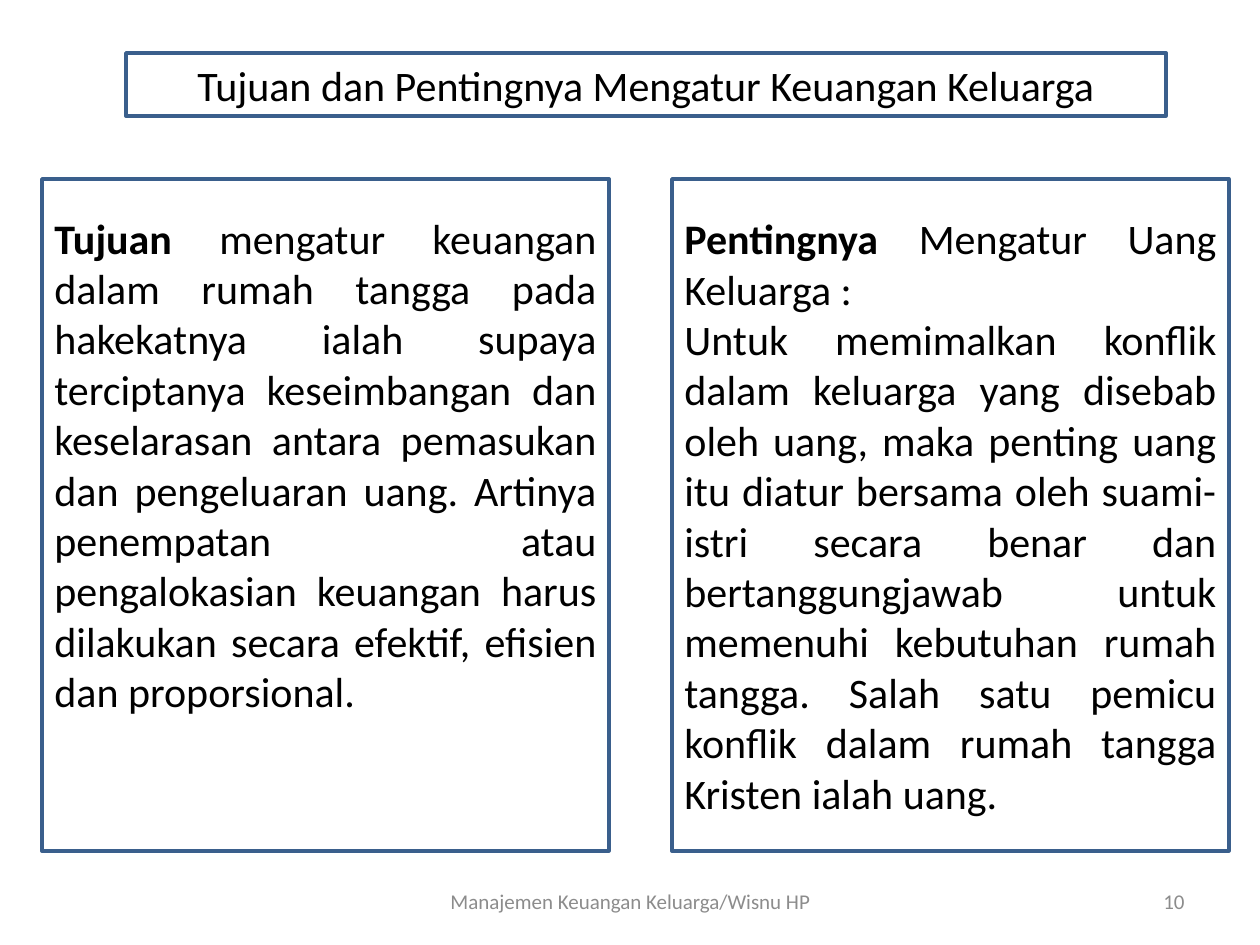
from pptx import Presentation
from pptx import util as u
from pptx.dml.color import RGBColor
from pptx.enum import shapes, text

EMU_PER_PX = 914400 / 126
FONT = "Calibri"
WHITE, BLACK, BLUE, GREY = "FFFFFF", "000000", "3A5F8C", "8C8C8C"

PURPOSE = [
    ("Tujuan ", "mengatur keuangan dalam rumah tangga pada hakekatnya ialah supaya "
     "terciptanya keseimbangan dan keselarasan antara pemasukan dan pengeluaran uang. "
     "Artinya penempatan atau pengalokasian keuangan harus dilakukan secara efektif, "
     "efisien dan proporsional."),
]
IMPORTANCE = [
    ("Pentingnya ", "Mengatur Uang Keluarga :"),
    ("", "Untuk memimalkan konflik dalam keluarga yang disebab oleh uang, maka penting "
     "uang itu diatur bersama oleh suami-istri secara benar dan bertanggungjawab untuk "
     "memenuhi kebutuhan rumah tangga. Salah satu pemicu konflik dalam rumah tangga "
     "Kristen ialah uang."),
]


def px(length):
    return u.Emu(round(length * EMU_PER_PX))


def color(hex_string):
    return RGBColor.from_string(hex_string)


def place(shape, left, top, width, height):
    shape.left, shape.top = px(left), px(top)
    shape.width, shape.height = px(width), px(height)


def style_box(shape):
    shape.fill.solid()
    shape.fill.fore_color.rgb = color(WHITE)
    shape.line.color.rgb = color(BLUE)
    shape.line.width = u.Pt(2)


def style_text(shape, size, hex_string, alignment):
    frame = shape.text_frame
    frame.word_wrap = True
    frame.auto_size = text.MSO_AUTO_SIZE.NONE
    frame.vertical_anchor = text.MSO_ANCHOR.MIDDLE
    for paragraph in frame.paragraphs:
        paragraph.alignment = alignment
        for run in paragraph.runs:
            run.font.name = FONT
            run.font.size = u.Pt(size)
            run.font.color.rgb = color(hex_string)


def add_title(slide, wording):
    title = slide.shapes.title
    place(title, 126, 53, 1040, 63)
    title.text_frame.text = wording
    style_box(title)
    style_text(title, 24, BLACK, text.PP_ALIGN.CENTER)


def add_panel(slide, left, width, paragraphs, bottom_margin=6):
    panel = slide.shapes.add_shape(
        shapes.MSO_SHAPE.RECTANGLE, px(left), px(179), px(width), px(672))
    panel.shadow.inherit = False
    style_box(panel)
    frame = panel.text_frame
    frame.margin_bottom = px(bottom_margin)
    for index, (lead, body) in enumerate(paragraphs):
        paragraph = frame.add_paragraph() if index else frame.paragraphs[0]
        if lead:
            run = paragraph.add_run()
            run.text = lead
            run.font.bold = True
        paragraph.add_run().text = body
    style_text(panel, 24, BLACK, text.PP_ALIGN.JUSTIFY)


def add_footer(slide, left, width, wording, alignment):
    footer = slide.shapes.add_textbox(px(left), px(876), px(width), px(50))
    footer.text_frame.text = wording
    style_text(footer, 12, GREY, alignment)


def main():
    presentation = Presentation()
    presentation.slide_width, presentation.slide_height = px(1260), px(945)
    slide = presentation.slides.add_slide(presentation.slide_layouts[5])

    # Title and the two panels; the left text sits above the middle
    add_title(slide, "Tujuan dan Pentingnya Mengatur Keuangan Keluarga")
    add_panel(slide, 42, 567, PURPOSE, bottom_margin=108)
    add_panel(slide, 672, 557, IMPORTANCE)

    # Footer and page number
    add_footer(slide, 431, 399, "Manajemen Keuangan Keluarga/Wisnu HP", text.PP_ALIGN.CENTER)
    add_footer(slide, 903, 294, "10", text.PP_ALIGN.RIGHT)

    presentation.save("out.pptx")


if __name__ == "__main__":
    main()
